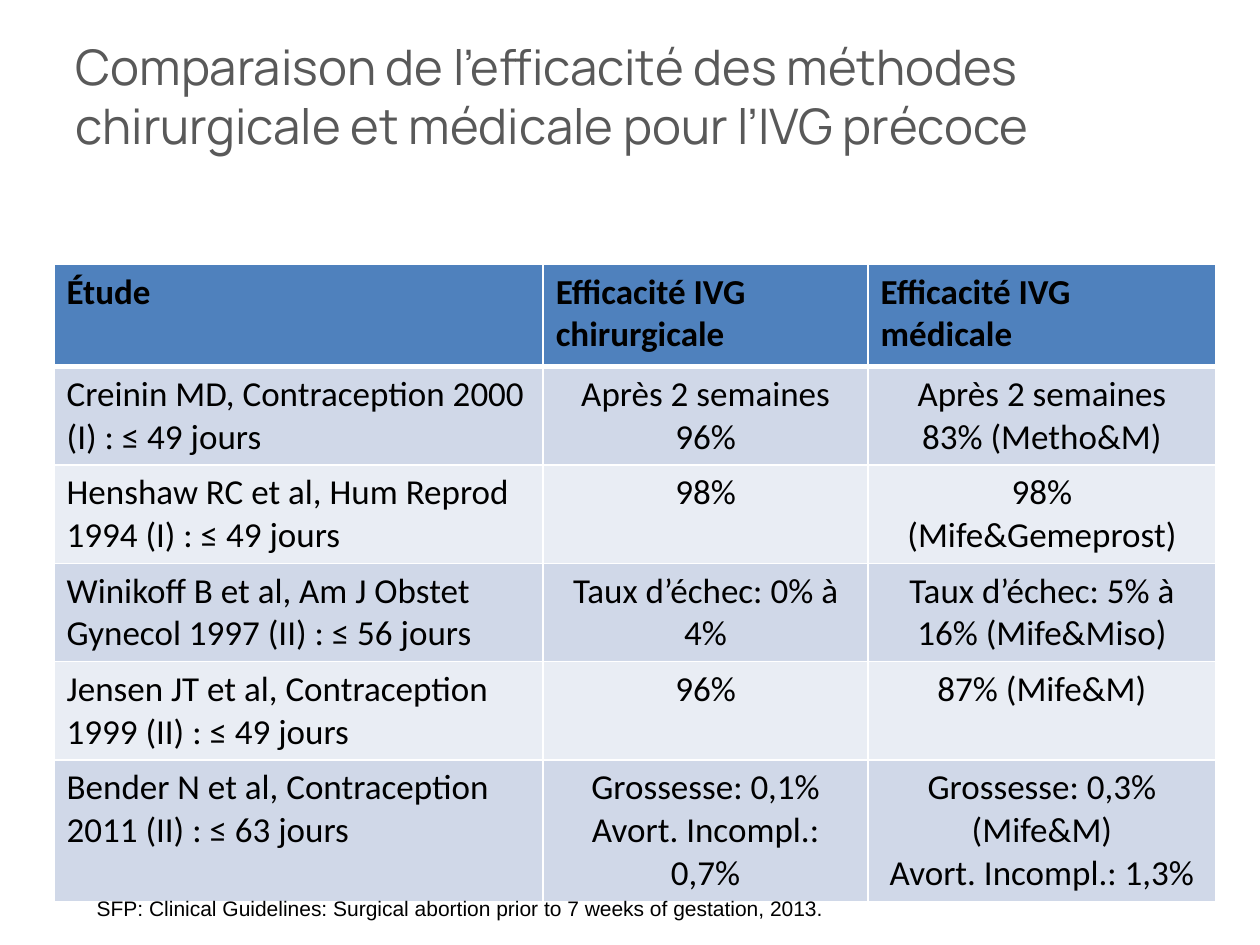
from lxml import etree
from pptx import Presentation
from pptx import util as u
from pptx.dml.color import RGBColor
from pptx.enum import text
from pptx.oxml import ns

GREY = RGBColor(0x59, 0x59, 0x59)
BLACK = RGBColor(0x00, 0x00, 0x00)
WHITE = RGBColor(0xFF, 0xFF, 0xFF)
BLUE = RGBColor(0x4F, 0x81, 0xBD)
BANDS = [RGBColor(0xD0, 0xD8, 0xE8), RGBColor(0xE9, 0xED, 0xF4)]

TITLE_FONT = {"name": "Manrope", "size": u.Pt(28), "bold": False}
HEADER_FONT = {"name": "Calibri", "size": u.Pt(20), "bold": True}
CELL_FONT = {**HEADER_FONT, "bold": False}
SOURCE_FONT = {"name": "Arial", "size": u.Pt(12), "bold": False}

TITLE = "Comparaison de l’efficacité des méthodes chirurgicale et médicale pour l’IVG précoce"
SOURCE = "SFP: Clinical Guidelines: Surgical abortion prior to 7 weeks of gestation, 2013."
COLUMN_WIDTHS = [9.86, 6.55, 7.01]
HEADER_HEIGHT, STUDY_HEIGHT = 2.06, 1.96
STUDIES = [
    ("Étude", "Efficacité IVG chirurgicale", "Efficacité IVG médicale"),
    ("Creinin MD, Contraception 2000 (I) : ≤ 49 jours",
     "Après 2 semaines\n96%", "Après 2 semaines\n83% (Metho&M)"),
    ("Henshaw RC et al, Hum Reprod 1994 (I) : ≤ 49 jours",
     "98%", "98% (Mife&Gemeprost)"),
    ("Winikoff B et al, Am J Obstet Gynecol 1997 (II) : ≤ 56 jours",
     "Taux d’échec: 0% à 4%", "Taux d’échec: 5% à 16% (Mife&Miso)"),
    ("Jensen JT et al, Contraception 1999 (II) : ≤ 49 jours",
     "96%", "87% (Mife&M)"),
    ("Bender N et al, Contraception 2011 (II) : ≤ 63 jours",
     "Grossesse: 0,1%\nAvort. Incompl.: 0,7%",
     "Grossesse: 0,3%\n(Mife&M)\nAvort. Incompl.: 1,3%"),
]


def write(frame, wording, font, color, align=text.PP_ALIGN.LEFT):
    """Fill a text frame, one paragraph per line, with one format."""
    frame.text = wording
    for paragraph in frame.paragraphs:
        paragraph.alignment = align
        for run in paragraph.runs:
            for attribute, value in font.items():
                setattr(run.font, attribute, value)
            run.font.color.rgb = color


def add_borders(cell, widths):
    """Draw white cell borders from a dict of side to width in points."""
    properties = cell._tc.get_or_add_tcPr()
    for side, width in widths.items():
        line = etree.SubElement(properties, ns.qn(f"a:ln{side}"), w=str(u.Pt(width)))
        fill = etree.SubElement(line, ns.qn("a:solidFill"))
        etree.SubElement(fill, ns.qn("a:srgbClr"), val=str(WHITE))


def set_title(slide):
    """Place and format the title placeholder."""
    title = slide.shapes.title
    place = {"left": 1.27, "top": 0.33, "width": 22.86, "height": 3.18}
    for attribute, value in place.items():
        setattr(title, attribute, u.Cm(value))
    title.text_frame.vertical_anchor = text.MSO_ANCHOR.MIDDLE
    write(title.text_frame, TITLE, TITLE_FONT, GREY)


def add_studies(slide):
    """Add the table that compares the studies."""
    height = HEADER_HEIGHT + STUDY_HEIGHT * (len(STUDIES) - 1)
    table = slide.shapes.add_table(
        len(STUDIES), len(COLUMN_WIDTHS), u.Cm(1.09), u.Cm(5.33),
        u.Cm(sum(COLUMN_WIDTHS)), u.Cm(height)).table
    for column, width in zip(table.columns, COLUMN_WIDTHS):
        column.width = u.Cm(width)
    for r, study in enumerate(STUDIES):
        is_header = r == 0
        table.rows[r].height = u.Cm(HEADER_HEIGHT if is_header else STUDY_HEIGHT)
        for c, wording in enumerate(study):
            cell = table.cell(r, c)
            add_borders(cell, {"L": 1, "R": 1, "T": 3 if r == 1 else 1,
                               "B": 3 if is_header else 1})
            cell.fill.solid()
            cell.fill.fore_color.rgb = BLUE if is_header else BANDS[(r - 1) % 2]
            centred = c > 0 and not is_header
            write(cell.text_frame, wording, HEADER_FONT if is_header else CELL_FONT,
                  BLACK, text.PP_ALIGN.CENTER if centred else text.PP_ALIGN.LEFT)


def add_source(slide):
    """Add the reference line under the table."""
    source = slide.shapes.add_textbox(u.Cm(1.7), u.Cm(17.93), u.Cm(15.27), u.Cm(1.55))
    source.text_frame.word_wrap = False
    source.text_frame.auto_size = text.MSO_AUTO_SIZE.SHAPE_TO_FIT_TEXT
    write(source.text_frame, SOURCE, SOURCE_FONT, BLACK)


def main():
    """Build the slide and save it."""
    deck = Presentation()
    deck.slide_width, deck.slide_height = u.Cm(25.4), u.Cm(19.05)
    slide = deck.slides.add_slide(deck.slide_layouts[5])
    set_title(slide)
    add_studies(slide)
    add_source(slide)
    deck.save("out.pptx")


if __name__ == "__main__":
    main()
